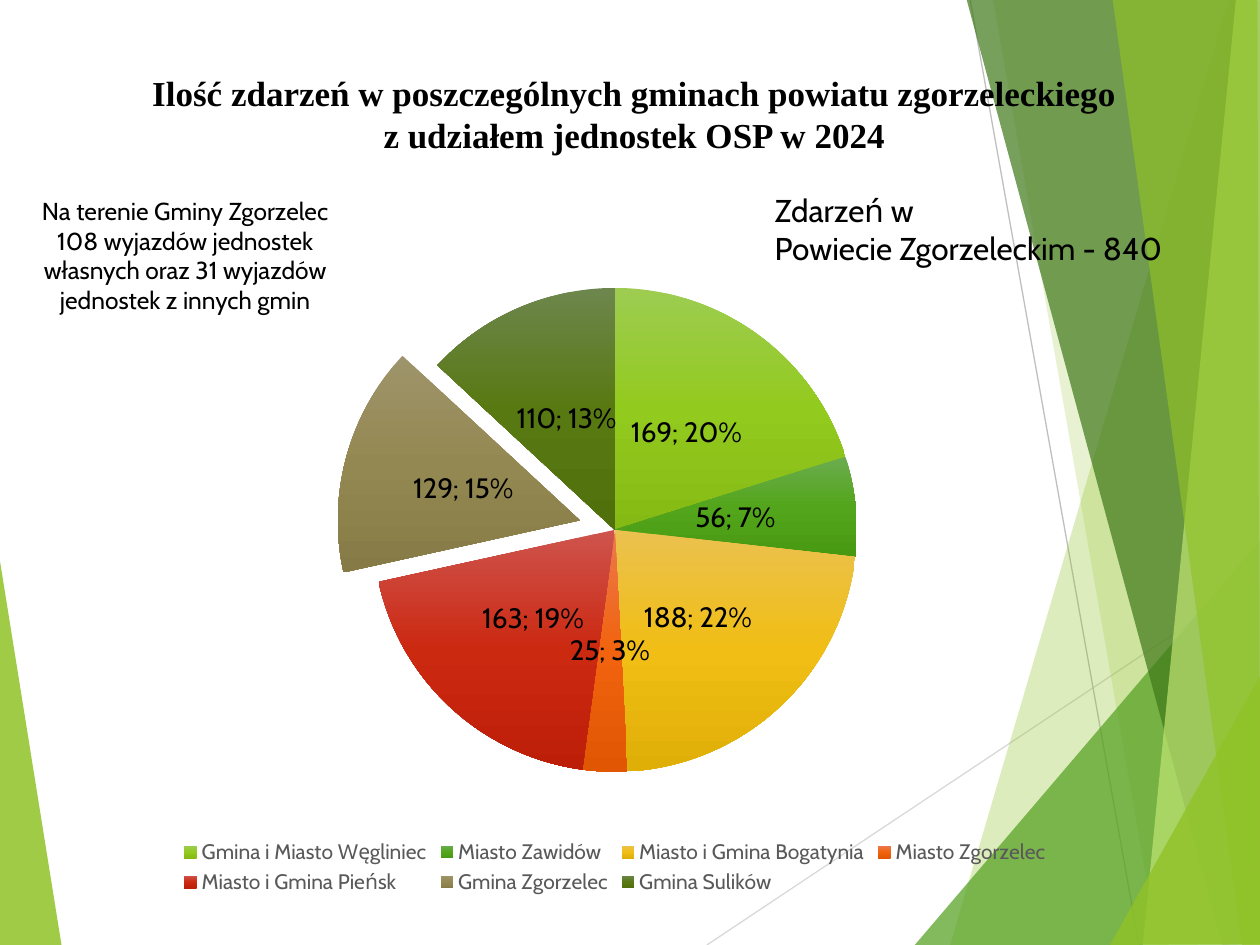
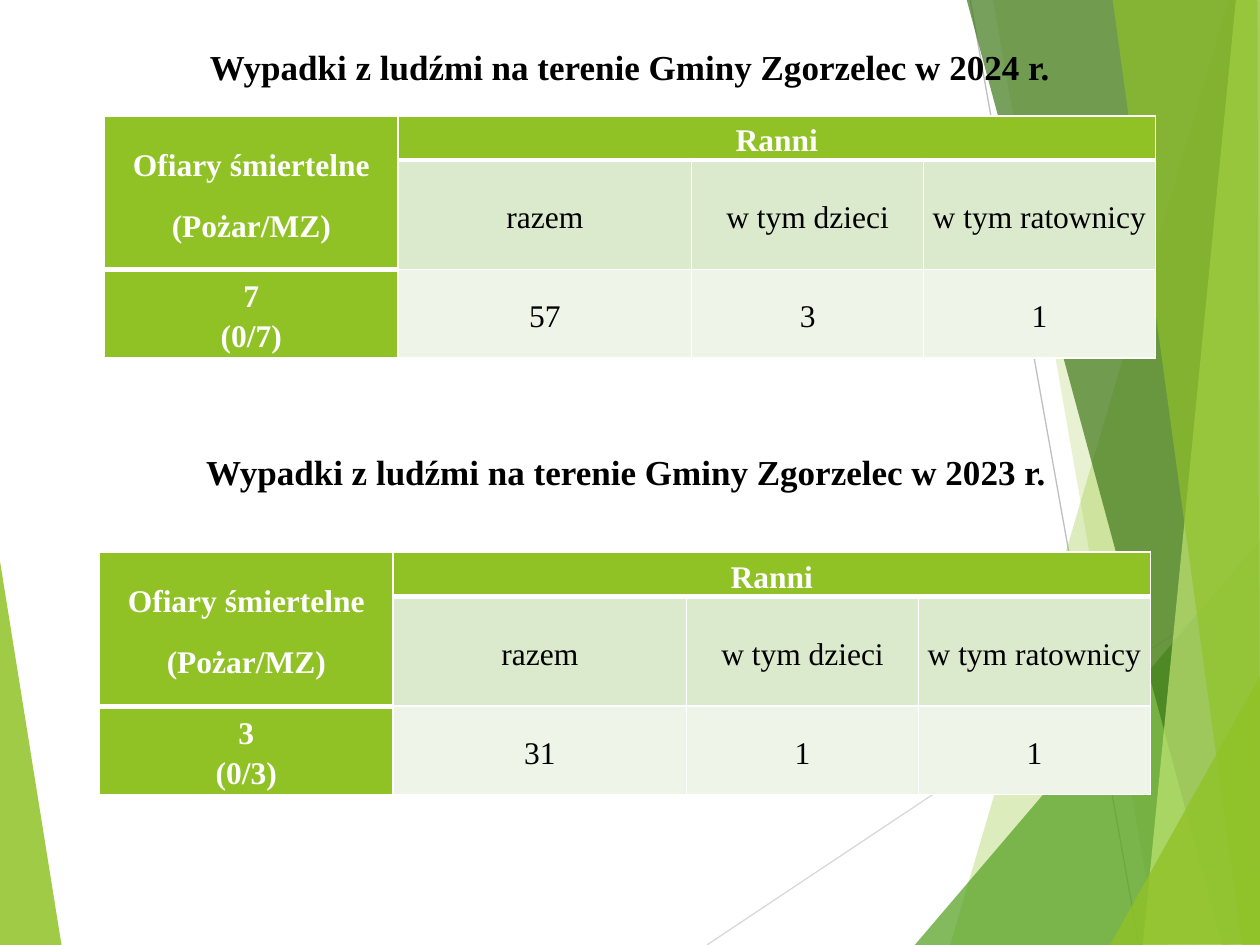
from copy import deepcopy
from dataclasses import dataclass
from typing import Any, NamedTuple

from lxml.etree import SubElement
from pptx import Presentation
from pptx.chart.data import CategoryChartData
from pptx.dml.color import RGBColor
from pptx.enum.chart import XL_CHART_TYPE, XL_LABEL_POSITION, XL_LEGEND_POSITION
from pptx.enum.shapes import MSO_CONNECTOR
from pptx.enum.text import MSO_ANCHOR, MSO_AUTO_SIZE, PP_ALIGN
from pptx.oxml.ns import qn
from pptx.util import Inches, Pt

SERIF, SANS = "Times New Roman", "Cabin"
BLACK, WHITE, GREEN = "000000", "FFFFFF", "90C226"
SUBHEAD_FILL, VALUE_FILL, LEGEND_GREY = "DBE9CD", "EEF4E8", "595959"


class Box(NamedTuple):
    left: float
    top: float
    width: float
    height: float

    def lengths(self) -> list:
        return [Inches(value) for value in self]


@dataclass
class TextStyle:
    size: float
    font: str
    color: str = BLACK
    bold: bool = False


@dataclass
class Facet:
    color: str
    opacity: int
    points: list[tuple[float, float]]


@dataclass
class Ray:
    color: str
    start: tuple[float, float]
    end: tuple[float, float]


@dataclass
class Commune:
    name: str
    events: int
    gradient: tuple[str, str, str]


@dataclass
class AccidentYear:
    year: int
    heading: Box
    table: Box
    deaths: list[str]
    injured: list[str]


HEADING = TextStyle(20, SERIF, bold=True)
TABLE_HEAD = TextStyle(18, SERIF, WHITE, True)
TABLE_BODY = TextStyle(18, SERIF)

# Background facets, from back to front
DECORATION = [
    Facet(GREEN, 85, [(-0.01, 4.39), (0.49, 7.51), (-0.01, 7.5)]),
    Ray("D9D9D9", (5.61, 7.5), (10.01, 4.57)),
    Ray("BFBFBF", (7.7, 0), (9.04, 7.5)),
    Facet(GREEN, 30, [(9.75, 0), (7.54, 7.5), (10.02, 7.51), (10.01, 0.01)]),
    Facet(GREEN, 20, [(7.88, -0.01), (9.19, 7.5), (10.01, 7.5), (10.01, -0.01)]),
    Facet("54A021", 72, [(7.26, 7.5), (10, 4.29), (10.01, 7.5)]),
    Facet("3F7819", 70, [(7.67, -0.01), (9.7, 7.5), (10.01, 7.49), (10.01, -0.01)]),
    Facet("C0E474", 70, [(9.81, -0.01), (9.07, 7.5), (10.01, 7.5), (10, -0.01)]),
    Facet(GREEN, 65, [(8.83, -0.01), (9.86, 7.5), (10, 7.5), (9.98, -0.01)]),
    Facet(GREEN, 80, [(8.81, 7.5), (10.01, 5.35), (10.01, 7.49)]),
]

COMMUNES = [
    Commune("Gmina i Miasto Węgliniec", 169, ("9DCC51", "93CA1E", "85BA14")),
    Commune("Miasto Zawidów", 56, ("6BAC4F", "53A61B", "489912")),
    Commune("Miasto i Gmina Bogatynia", 188, ("EBC14F", "F0BE14", "E0AF07")),
    Commune("Miasto Zgorzelec", 25, ("EC794E", "F1630E", "E05603")),
    Commune("Miasto i Gmina Pieńsk", 163, ("CE544D", "CC2911", "BD1E08")),
    Commune("Gmina Zgorzelec", 129, ("9E946B", "948852", "867A46")),
    Commune("Gmina Sulików", 110, ("6D864D", "587912", "50700C")),
]
EXPLODED = "Gmina Zgorzelec"

ACCIDENT_YEARS = [
    AccidentYear(2024, Box(0, 0.31, 10, 0.44), Box(0.83, 0.92, 8.35, 1.92),
                 ["7", "(0/7)"], ["57", "3", "1"]),
    AccidentYear(2023, Box(-0.03, 3.53, 10, 0.44), Box(0.79, 4.38, 8.35, 1.92),
                 ["3", "(0/3)"], ["31", "1", "1"]),
]
COLUMN_WIDTHS = [2.33, 2.33, 1.84, 1.84]
ROW_HEIGHTS = [0.35, 0.87, 0.7]


def rgb(color: str) -> RGBColor:
    return RGBColor.from_string(color)


def apply(target: Any, values: dict) -> None:
    for name, value in values.items():
        setattr(target, name, value)


def style_font(font: Any, style: TextStyle) -> None:
    apply(font, {"size": Pt(style.size), "name": style.font, "bold": style.bold})
    font.color.rgb = rgb(style.color)


def write(frame: Any, lines: list[str], style: TextStyle, align: Any, **spacing: Any) -> None:
    for index, line in enumerate(lines):
        paragraph = frame.paragraphs[0] if index == 0 else frame.add_paragraph()
        paragraph.text = line
        apply(paragraph, {"alignment": align, **spacing})
        for run in paragraph.runs:
            style_font(run.font, style)


def add_text(slide: Any, box: Box, lines: list[str], style: TextStyle,
             align: Any = PP_ALIGN.CENTER) -> None:
    frame = slide.shapes.add_textbox(*box.lengths()).text_frame
    frame.word_wrap = True
    write(frame, lines, style, align)


def set_title(slide: Any, box: Box, text: str) -> None:
    title = slide.shapes.title
    apply(title, dict(zip(("left", "top", "width", "height"), box.lengths())))
    apply(title.text_frame, {"word_wrap": True, "auto_size": MSO_AUTO_SIZE.NONE,
                             "vertical_anchor": MSO_ANCHOR.TOP})
    write(title.text_frame, [text], HEADING, PP_ALIGN.CENTER)


# Shared background
def draw_facet(slide: Any, facet: Facet) -> Any:
    points = [(Inches(x), Inches(y)) for x, y in facet.points]
    builder = slide.shapes.build_freeform(*points[0], scale=1.0)
    builder.add_line_segments(points[1:], close=True)
    shape = builder.convert_to_shape()
    shape.shadow.inherit = False
    shape.fill.solid()
    shape.fill.fore_color.rgb = rgb(facet.color)
    shape.line.fill.background()
    color = shape._element.spPr.find(f".//{qn('a:srgbClr')}")
    SubElement(color, qn("a:alpha")).set("val", str(facet.opacity * 1000))
    return shape


def draw_ray(slide: Any, ray: Ray) -> Any:
    ends = [Inches(value) for value in (*ray.start, *ray.end)]
    line = slide.shapes.add_connector(MSO_CONNECTOR.STRAIGHT, *ends)
    line.line.width = Pt(0.75)
    line.line.color.rgb = rgb(ray.color)
    SubElement(line._element.spPr, qn("a:effectLst"))
    return line


def decorate_layout(layout: Any, slide: Any) -> None:
    """Draw the background on a slide, then move it to the layout."""
    drawn = [draw_facet(slide, part) if isinstance(part, Facet) else draw_ray(slide, part)
             for part in DECORATION]
    for number, shape in enumerate(drawn, start=100):
        shape._element._nvXxPr.cNvPr.id = number
        layout.shapes._spTree.append(shape._element)


# Pie chart of events
def add_events_pie(slide: Any, box: Box) -> None:
    data = CategoryChartData()
    data.categories = [commune.name for commune in COMMUNES]
    data.add_series("Series 1", [commune.events for commune in COMMUNES])
    chart = slide.shapes.add_chart(XL_CHART_TYPE.PIE, *box.lengths(), data).chart
    apply(chart, {"has_title": False, "has_legend": True})
    style_font(chart.font, TextStyle(10, SANS))
    apply(chart.legend, {"position": XL_LEGEND_POSITION.BOTTOM, "include_in_layout": False})
    style_font(chart.legend.font, TextStyle(12, SANS, LEGEND_GREY))

    plot = chart.plots[0]
    plot.vary_by_categories = True
    series = plot.series[0]
    for index, commune in enumerate(COMMUNES):
        point = series.points[index]
        fill = point.format.fill
        fill.gradient()
        fill.gradient_angle = 270
        first = fill.gradient_stops[0]._gs
        first.addnext(deepcopy(first))
        for stop, position, color in zip(fill.gradient_stops, (0, 0.5, 1), commune.gradient):
            stop.position = position
            stop.color.rgb = rgb(color)
        point.format.line.fill.background()
        if commune.name == EXPLODED:
            slice_xml = series._element.findall(qn("c:dPt"))[index]
            explosion = SubElement(slice_xml, qn("c:explosion"))
            explosion.set("val", "15")
            slice_xml.find(qn("c:spPr")).addprevious(explosion)

    labels = series.data_labels
    apply(labels, {"show_value": True, "show_percentage": True,
                   "position": XL_LABEL_POSITION.CENTER})
    style_font(labels.font, TextStyle(16, SANS))
    separator = SubElement(labels._element, qn("c:separator"))
    separator.text = "; "
    labels._element.find(qn("c:showBubbleSize")).addnext(separator)


# Tables of accidents
def set_borders(cell: Any, bottom: float) -> None:
    properties = cell._tc.get_or_add_tcPr()
    widths = {"a:lnL": 1, "a:lnR": 1, "a:lnT": 1, "a:lnB": bottom}
    for index, (side, width) in enumerate(widths.items()):
        line = SubElement(properties, qn(side))
        line.set("w", str(Pt(width)))
        SubElement(SubElement(line, qn("a:solidFill")), qn("a:srgbClr")).set("val", WHITE)
        properties.insert(index, line)


def add_accident_table(slide: Any, accidents: AccidentYear) -> None:
    rows = [
        [["Ofiary śmiertelne", "(Pożar/MZ)"], ["Ranni"], [], []],
        [[], ["razem"], ["w tym dzieci"], ["w tym ratownicy"]],
        [accidents.deaths, *([value] for value in accidents.injured)],
    ]
    table = slide.shapes.add_table(3, 4, *accidents.table.lengths()).table
    for column, width in zip(table.columns, COLUMN_WIDTHS):
        column.width = Inches(width)
    for row, height in zip(table.rows, ROW_HEIGHTS):
        row.height = Inches(height)
    table.cell(0, 0).merge(table.cell(1, 0))
    table.cell(0, 1).merge(table.cell(0, 3))

    for r, row in enumerate(rows):
        gap = Pt(0 if r == 2 else 6)
        for c, lines in enumerate(row):
            cell = table.cell(r, c)
            is_head = r == 0 or c == 0
            apply(cell, {"vertical_anchor": MSO_ANCHOR.MIDDLE,
                         "margin_left": Inches(0.07), "margin_right": Inches(0.07),
                         "margin_top": Inches(0.01), "margin_bottom": 0})
            cell.fill.solid()
            cell.fill.fore_color.rgb = rgb(
                GREEN if is_head else SUBHEAD_FILL if r == 1 else VALUE_FILL)
            set_borders(cell, bottom=3 if is_head and r < 2 else 1)
            write(cell.text_frame, lines, TABLE_HEAD if is_head else TABLE_BODY,
                  PP_ALIGN.CENTER, line_spacing=1.15, space_before=gap, space_after=gap)


def build_events_slide(slide: Any) -> None:
    set_title(slide, Box(0.43, 0.52, 9.21, 0.77),
              "Ilość zdarzeń w poszczególnych gminach powiatu zgorzeleckiego\v"
              "z udziałem jednostek OSP w 2024")
    add_text(slide, Box(6.05, 1.47, 3.58, 0.71),
             ["Zdarzeń w", "Powiecie Zgorzeleckim - 840"], TextStyle(18, SANS), PP_ALIGN.LEFT)
    add_events_pie(slide, Box(0.35, 1.86, 9.06, 5.28))
    add_text(slide, Box(0.13, 1.51, 2.68, 1.04),
             ["Na terenie Gminy Zgorzelec 108 wyjazdów jednostek własnych "
              "oraz 31 wyjazdów jednostek z innych gmin"], TextStyle(14, SANS))


def build_accidents_slide(slide: Any) -> None:
    for index, accidents in enumerate(ACCIDENT_YEARS):
        heading = f"Wypadki z ludźmi na terenie Gminy Zgorzelec w {accidents.year} r."
        if index == 0:
            set_title(slide, accidents.heading, heading)
        else:
            add_text(slide, accidents.heading, [heading], HEADING)
        add_accident_table(slide, accidents)


def main() -> None:
    deck = Presentation()
    apply(deck, {"slide_width": Inches(10), "slide_height": Inches(7.5)})
    layout = deck.slide_layouts[5]
    events, accidents = (deck.slides.add_slide(layout) for _ in range(2))
    decorate_layout(layout, events)
    build_events_slide(events)
    build_accidents_slide(accidents)
    deck.save("out.pptx")


if __name__ == "__main__":
    main()
